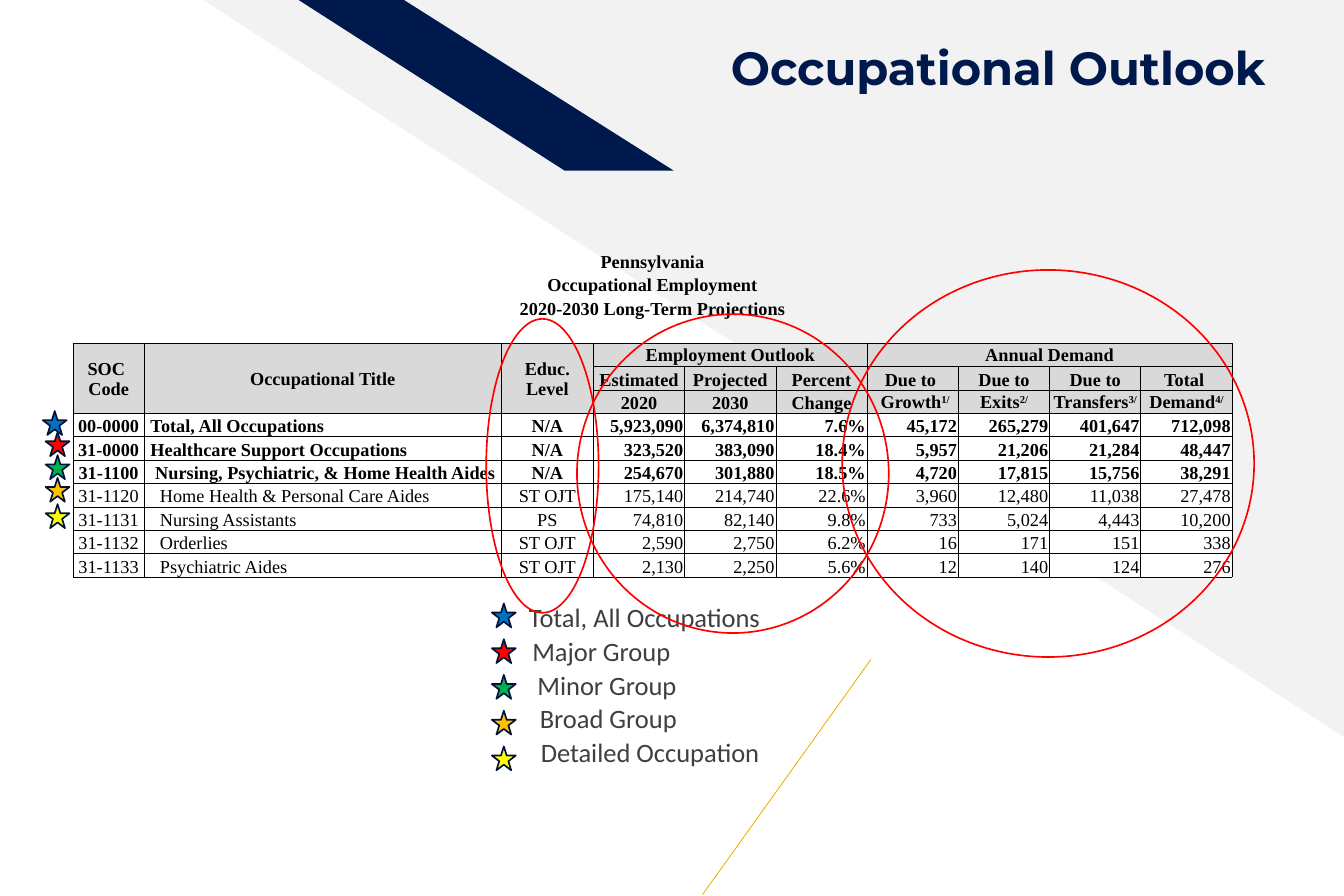
from lxml import etree
from pptx import Presentation
from pptx.dml.color import RGBColor
from pptx.enum import shapes, text
from pptx.oxml.ns import qn
from pptx import util as u

COLORS = {
    "navy": "00194C", "outline": "001238", "gray": "F2F2F2", "gold": "EAB200",
    "header": "D9D9D9", "white": "FFFFFF", "black": "000000", "body": "3F3F3F",
    "blue": "0070C0", "red": "FF0000", "green": "00B050", "orange": "FFC000",
    "yellow": "FFFF00",
}
NO_STYLE = "{2D5ABB26-0587-4C30-8999-92F81FD0307C}"
LEFT, CENTER, RIGHT = text.PP_ALIGN.LEFT, text.PP_ALIGN.CENTER, text.PP_ALIGN.RIGHT
MIDDLE, BOTTOM = text.MSO_ANCHOR.MIDDLE, text.MSO_ANCHOR.BOTTOM

CAPTIONS = ["Pennsylvania", "Occupational Employment", "2020-2030 Long-Term Projections"]
SPANNING_HEADERS = [
    (0, 3, 1, "SOC \nCode"), (1, 3, 1, "Occupational Title"), (2, 3, 1, "Educ. Level"),
    (3, 1, 3, "Employment Outlook"), (6, 1, 4, "Annual Demand"),
]
SPLIT_HEADERS = [
    ("Estimated", "2020"), ("Projected", "2030"), ("Percent", "Change"),
    ("Due to ", " Growth|1/"), ("Due to", "Exits|2/"), ("Due to", "Transfers|3/"),
    ("Total ", "Demand|4/"),
]
OCCUPATIONS = [
    (1, "00-0000", "Total, All Occupations", "N/A",
     "5,923,090", "6,374,810", "7.6%", "45,172", "265,279", "401,647", "712,098"),
    (1, "31-0000", "Healthcare Support Occupations", "N/A",
     "323,520", "383,090", "18.4%", "5,957", "21,206", "21,284", "48,447"),
    (2, "31-1100", "Nursing, Psychiatric, & Home Health Aides", "N/A",
     "254,670", "301,880", "18.5%", "4,720", "17,815", "15,756", "38,291"),
    (3, "31-1120", "Home Health & Personal Care Aides", "ST OJT",
     "175,140", "214,740", "22.6%", "3,960", "12,480", "11,038", "27,478"),
    (3, "31-1131", "Nursing Assistants", "PS",
     "74,810", "82,140", "9.8%", "733", "5,024", "4,443", "10,200"),
    (3, "31-1132", "Orderlies", "ST OJT",
     "2,590", "2,750", "6.2%", "16", "171", "151", "338"),
    (3, "31-1133", "Psychiatric Aides", "ST OJT",
     "2,130", "2,250", "5.6%", "12", "140", "124", "276"),
]
WIDTHS = [1.52, 7.59, 1.96] + [1.94] * 7
ROW_HEIGHT = 0.47
HEADER_TOP, BODY_TOP = 4, 7
ROW_BORDERS = {0: "", 1: "", 2: "", 3: "B", 5: "LRT", 6: "LRB"}
GROUPS = [
    ("Total, All Occupations", "blue", 11, (0.91, 8.74)),
    ("Major Group", "red", 11.07, (0.97, 9.19)),
    ("Minor Group", "green", 11.18, (0.97, 9.68)),
    ("Broad Group", "orange", 11.23, (0.97, 10.16)),
    ("Detailed Occupation", "yellow", 11.25, (0.97, 10.72)),
]
HIGHLIGHTS = [
    (10.34, 6.78, 2.39, 6.25), (12.27, 6.68, 6.63, 6.78), (17.91, 5.74, 8.76, 8.23),
]


def color(name):
    return RGBColor.from_string(COLORS[name])


class OutlookSlide:
    def __init__(self, slide):
        self.slide = slide

    def paint(self, shape, fill=None, line=None):
        shape.shadow.inherit = False
        if fill:
            shape.fill.solid()
            shape.fill.fore_color.rgb = color(fill)
        else:
            shape.fill.background()
        if line:
            shape.line.color.rgb = color(line)
            shape.line.width = u.Pt(1)
        else:
            shape.line.fill.background()
        return shape

    def shape(self, kind, box, fill=None, line=None):
        return self.paint(
            self.slide.shapes.add_shape(kind, *map(u.Cm, box)), fill, line)

    def band(self, points, fill):
        corners = [(u.Cm(x), u.Cm(y)) for x, y in points]
        builder = self.slide.shapes.build_freeform(*corners[0])
        builder.add_line_segments(corners[1:], close=True)
        self.paint(builder.convert_to_shape(), fill)

    def line(self, ends, name):
        rule = self.slide.shapes.add_connector(
            shapes.MSO_CONNECTOR.STRAIGHT, *map(u.Cm, ends))
        rule.line.color.rgb = color(name)
        rule.line.width = u.Pt(0.5)
        etree.SubElement(rule._element.spPr, qn("a:effectLst"))

    def run(self, paragraph, words, font, size, ink, bold=False):
        run = paragraph.add_run()
        run.text = words
        run.font.name = font
        run.font.size = u.Pt(size)
        run.font.bold = bold
        run.font.color.rgb = color(ink)
        return run

    def label(self, box, words, font, size, ink, bold=False, align=LEFT):
        frame = self.slide.shapes.add_textbox(*map(u.Cm, box)).text_frame
        frame.word_wrap = True
        paragraph = frame.paragraphs[0]
        paragraph.alignment = align
        self.run(paragraph, words, font, size, ink, bold)
        return frame

    def star(self, left, top, fill):
        self.shape(shapes.MSO_SHAPE.STAR_5_POINT, (left, top, 0.51, 0.51), fill, "outline")

    def table(self, left, top, rows, widths, height):
        table = self.slide.shapes.add_table(
            rows, len(widths), u.Cm(left), u.Cm(top),
            u.Cm(sum(widths)), u.Cm(rows * height)).table
        table.first_row = table.horz_banding = False
        table._tbl.tblPr.find(qn("a:tableStyleId")).text = NO_STYLE
        for column, width in zip(table.columns, widths):
            column.width = u.Cm(width)
        for row in table.rows:
            row.height = u.Cm(height)
        return table

    def dress(self, cell, borders, fill=None):
        cell.margin_left = cell.margin_right = cell.margin_top = u.Cm(0.03)
        cell.margin_bottom = 0
        etree.SubElement(cell.text_frame.paragraphs[0]._p, qn("a:endParaRPr"), sz="1100")
        tc_pr = cell._tc.get_or_add_tcPr()
        for side in borders:
            edge = etree.SubElement(tc_pr, qn(f"a:ln{side}"), w="6350")
            solid = etree.SubElement(edge, qn("a:solidFill"))
            etree.SubElement(solid, qn("a:srgbClr"), val=COLORS["black"])
        if fill:
            cell.fill.solid()
            cell.fill.fore_color.rgb = color(fill)
        else:
            cell.fill.background()

    def entry(self, cell, words, align=CENTER, anchor=MIDDLE, bold=True):
        cell.vertical_anchor = anchor
        paragraph = cell.text_frame.paragraphs[0]
        paragraph.alignment = align
        for number, row in enumerate(words.split("\n")):
            if number:
                paragraph.add_line_break()
            base, _, note = row.partition("|")
            self.run(paragraph, base, "Times New Roman", 11, "black", bold)
            if note:
                mark = self.run(paragraph, note, "Times New Roman", 11, "black", bold)
                mark._r.get_or_add_rPr().set("baseline", "30000")


def add_projections(page):
    table = page.table(1.55, 5.31, BODY_TOP + len(OCCUPATIONS), WIDTHS, ROW_HEIGHT)
    for r in range(len(table.rows)):
        fill = "white" if r >= BODY_TOP else "header" if r >= HEADER_TOP else None
        for c in range(len(WIDTHS)):
            page.dress(table.cell(r, c), ROW_BORDERS.get(r, "LRTB"), fill)
    for r, caption in enumerate(CAPTIONS):
        table.cell(r, 0).merge(table.cell(r, len(WIDTHS) - 1))
        page.entry(table.cell(r, 0), caption)
    for c, down, across, heading in SPANNING_HEADERS:
        origin = table.cell(HEADER_TOP, c)
        origin.merge(table.cell(HEADER_TOP + down - 1, c + across - 1))
        page.entry(origin, heading)
    for c, (upper, lower) in enumerate(SPLIT_HEADERS, 3):
        page.entry(table.cell(HEADER_TOP + 1, c), upper, anchor=BOTTOM)
        page.entry(table.cell(HEADER_TOP + 2, c), lower, anchor=MIDDLE if c >= 6 else BOTTOM)
    for r, (level, *values) in enumerate(OCCUPATIONS, BODY_TOP):
        for c, value in enumerate(values):
            align = LEFT if c == 1 else RIGHT if c > 2 else CENTER
            page.entry(table.cell(r, c), value, align, BOTTOM, bold=level < 3)
        table.cell(r, 1).margin_left = u.Cm(0.03 + 0.1 * level)


def main():
    deck = Presentation()
    deck.slide_width, deck.slide_height = u.Cm(28.58), u.Cm(19.05)
    page = OutlookSlide(deck.slides.add_slide(deck.slide_layouts[6]))

    corner = page.shape(shapes.MSO_SHAPE.RIGHT_TRIANGLE, (4.32, 0, 24.26, 15.67), "gray")
    corner.rotation = 180
    page.band([(14.33, 3.63), (8.59, 0), (6.35, 0), (12.01, 3.63)], "navy")
    page.line((14.94, 19.02, 18.52, 14.02), "gold")

    title = page.label((10.29, 0.58, 16.87, 1.73), "Occupational Outlook",
                       "Montserrat", 28, "navy", True, RIGHT)
    title.vertical_anchor = MIDDLE
    title.margin_bottom = 0
    title.paragraphs[0].line_spacing = 0.9

    add_projections(page)
    for i, (group, fill, left, marker) in enumerate(GROUPS):
        page.star(*marker, fill)
        page.star(10.46, 12.83 + 0.76 * i, fill)
        page.label((left, 12.65 + 0.72 * i, 10.21, 0.94), group, "Calibri", 16, "body")
    for box in HIGHLIGHTS:
        page.shape(shapes.MSO_SHAPE.OVAL, box, line="red")

    deck.save("out.pptx")


if __name__ == "__main__":
    main()
